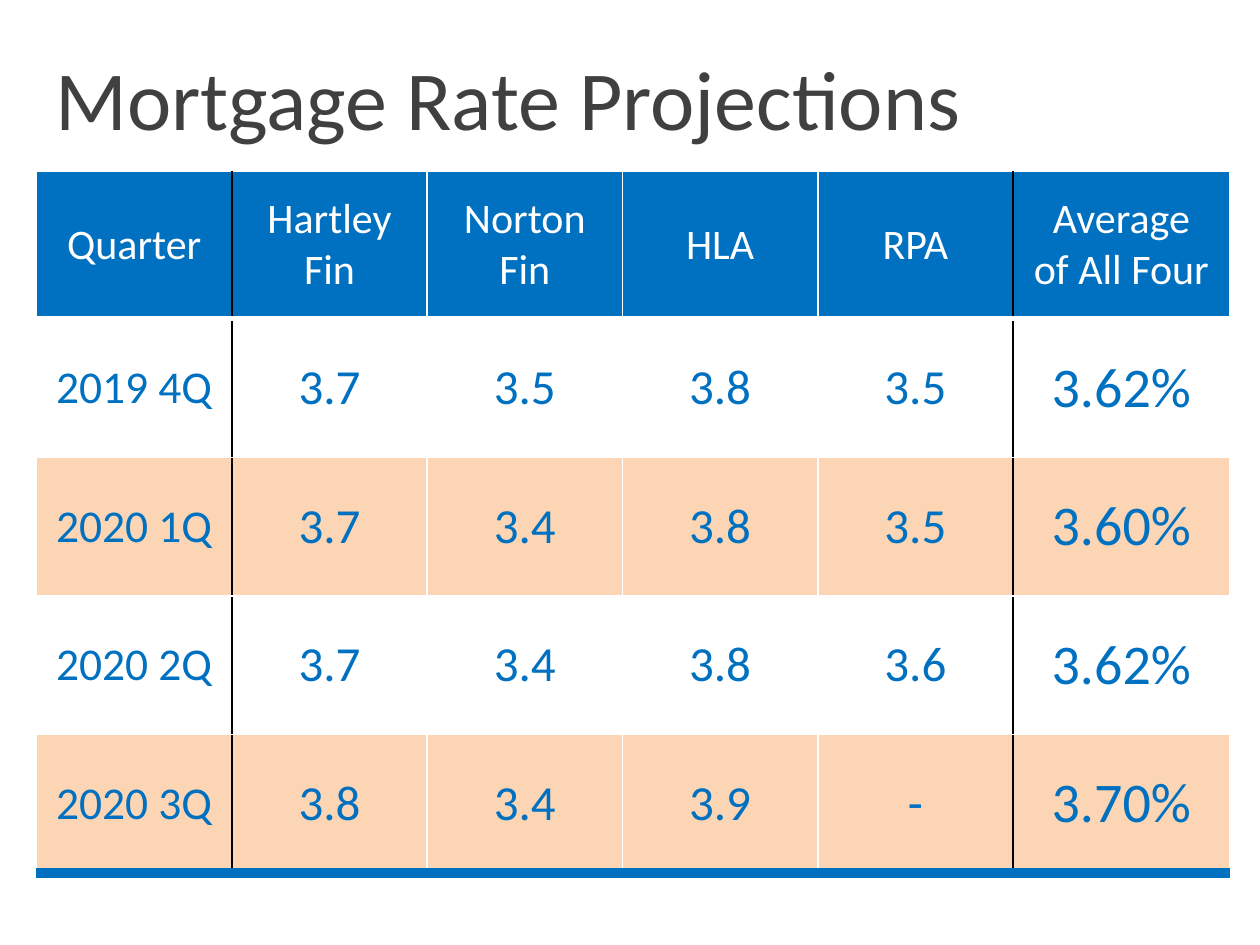
import lxml.etree
import pptx
import pptx.dml.color
import pptx.enum.text
import pptx.oxml.ns
import pptx.util

RGB = pptx.dml.color.RGBColor
WHITE = RGB(0xFF, 0xFF, 0xFF)
BLACK = RGB(0x00, 0x00, 0x00)
BLUE = RGB(0x00, 0x70, 0xC0)
PEACH = RGB(0xFC, 0xD5, 0xB5)
GRAY = RGB(0x40, 0x40, 0x40)

ALIGN = pptx.enum.text.PP_ALIGN
ANCHOR = pptx.enum.text.MSO_ANCHOR
EMU_PER_PX = 9144  # 100 px to the inch

RATES = [
    ["Quarter", "Hartley Fin", "Norton Fin", "HLA", "RPA", "Average\nof All Four"],
    ["2019 4Q", "3.7", "3.5", "3.8", "3.5", "3.62%"],
    ["2020 1Q", "3.7", "3.4", "3.8", "3.5", "3.60%"],
    ["2020 2Q", "3.7", "3.4", "3.8", "3.6", "3.62%"],
    ["2020 3Q", "3.8", "3.4", "3.9", "-", "3.70%"],
]
COL_WIDTHS = [155] * 5 + [172]
ROW_HEIGHTS = [117] + [110] * 4
HEADER_SIZE = 24
BODY_SIZES = [26] + [28] * 4 + [32]


def px(n):
    return pptx.util.Emu(n * EMU_PER_PX)


class Deck:
    """Holds the font and the slide being built."""

    font = "Calibri"

    def __init__(self, width, height):
        self.prs = pptx.Presentation()
        self.prs.slide_width, self.prs.slide_height = px(width), px(height)

    def add_slide(self):
        self.s = self.prs.slides.add_slide(self.prs.slide_layouts[5])

    def set_text(self, tf, text, size, color, align):
        tf.text = text
        for p in tf.paragraphs:
            p.alignment = align
            for r in p.runs:
                r.font.name = self.font
                r.font.size = pptx.util.Pt(size)
                r.font.color.rgb = color

    def title(self, text, left, top, width, height):
        sp = self.s.shapes.title
        sp.left, sp.top, sp.width, sp.height = map(px, (left, top, width, height))
        tf = sp.text_frame
        tf.word_wrap = True
        tf.auto_size = pptx.enum.text.MSO_AUTO_SIZE.NONE
        tf.vertical_anchor = ANCHOR.TOP
        self.set_text(tf, text, 48, GRAY, ALIGN.LEFT)

    def border(self, cell, side, color, points):
        tcPr = cell._tc.get_or_add_tcPr()
        ln = lxml.etree.SubElement(tcPr, pptx.oxml.ns.qn(f"a:ln{side}"),
                                   w=str(pptx.util.Pt(points)))
        fill = lxml.etree.SubElement(ln, pptx.oxml.ns.qn("a:solidFill"))
        lxml.etree.SubElement(fill, pptx.oxml.ns.qn("a:srgbClr"), val=str(color))

    def rate_table(self, rows, left, top):
        last_row, last_col = len(rows) - 1, len(COL_WIDTHS) - 1
        table = self.s.shapes.add_table(
            len(rows), len(COL_WIDTHS), px(left), px(top),
            px(sum(COL_WIDTHS)), px(sum(ROW_HEIGHTS))).table
        for column, width in zip(table.columns, COL_WIDTHS):
            column.width = px(width)
        for row, height in zip(table.rows, ROW_HEIGHTS):
            row.height = px(height)

        def vertical_rule(edge):
            """Black beside the first and last columns, white elsewhere."""
            return BLACK if edge in (1, last_col) else WHITE

        for i, row in enumerate(rows):
            header = i == 0
            background = BLUE if header else WHITE if i % 2 else PEACH
            for j, text in enumerate(row):
                cell = table.cell(i, j)
                self.border(cell, "L", vertical_rule(j), 1)
                self.border(cell, "R", vertical_rule(j + 1), 1)
                self.border(cell, "T", WHITE, 3 if i == 1 else 1)
                if i == last_row:
                    self.border(cell, "B", BLUE, 6)
                else:
                    self.border(cell, "B", WHITE, 3 if header else 1)
                cell.fill.solid()
                cell.fill.fore_color.rgb = background
                cell.vertical_anchor = ANCHOR.MIDDLE
                cell.margin_left = cell.margin_right = px(10)
                cell.margin_top = cell.margin_bottom = px(7)
                self.set_text(cell.text_frame, text,
                              HEADER_SIZE if header else BODY_SIZES[j],
                              WHITE if header else BLUE, ALIGN.CENTER)


def main():
    deck = Deck(1000, 750)
    deck.add_slide()
    deck.title("Mortgage Rate Projections", 34, 32, 867, 91)
    deck.rate_table(RATES, 29, 136)
    deck.prs.save("out.pptx")


if __name__ == "__main__":
    main()
